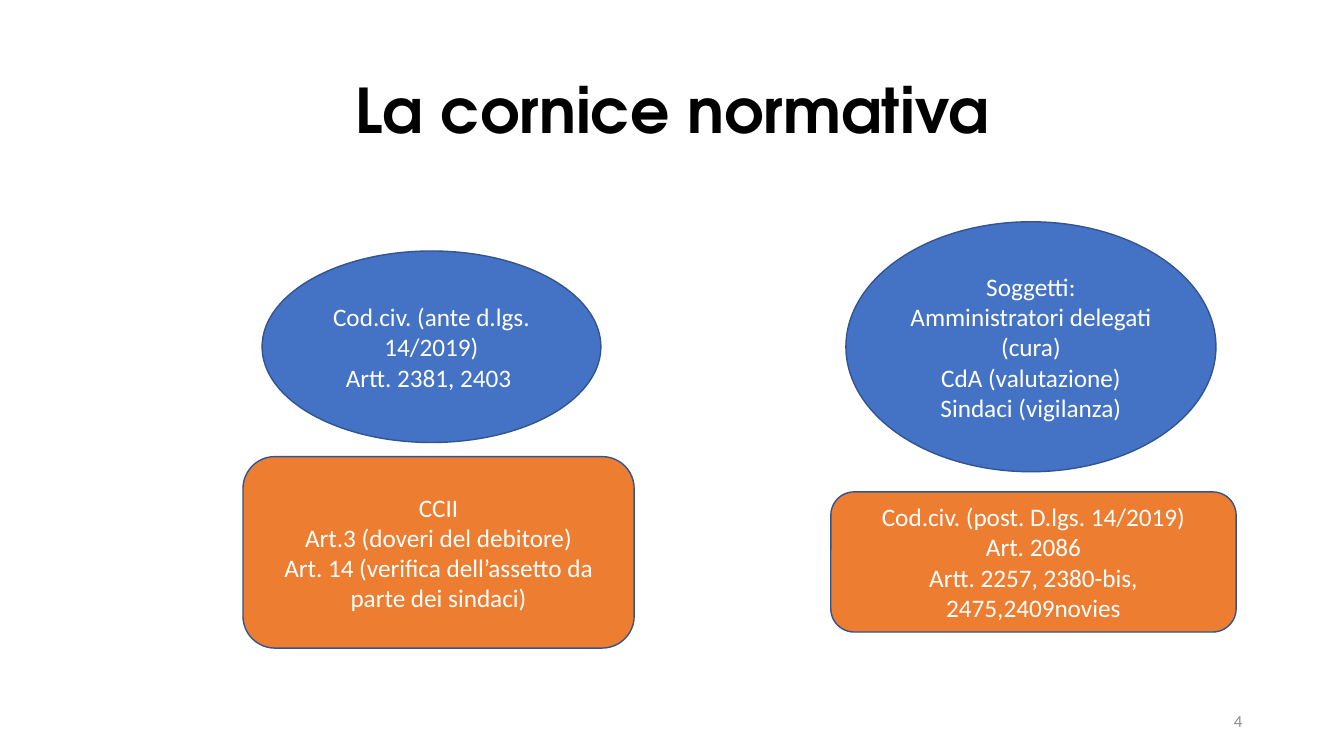
from pptx import Presentation
from pptx.dml.color import RGBColor
from pptx.enum import shapes, text
from pptx.util import Inches, Pt

COLORS = {"blue": "4472C4", "orange": "ED7D31", "edge": "325491",
          "white": "FFFFFF", "black": "000000", "gray": "8C8C8C"}
OVAL = shapes.MSO_SHAPE.OVAL
ROUND = shapes.MSO_SHAPE.ROUNDED_RECTANGLE
ALIGN = text.PP_ALIGN


def color(name):
    return RGBColor.from_string(COLORS[name])


def write(shape, lines, size, tint, align=ALIGN.CENTER, face="Calibri", bold=False):
    """Fill a shape with one middle-anchored paragraph per line."""
    frame = shape.text_frame
    frame.word_wrap = True
    frame.vertical_anchor = text.MSO_ANCHOR.MIDDLE
    for i, line in enumerate(lines):
        para = frame.add_paragraph() if i else frame.paragraphs[0]
        para.alignment = align
        run = para.add_run()
        run.text = line
        run.font.name = face
        run.font.size = Pt(size)
        run.font.bold = bold
        run.font.color.rgb = color(tint)


deck = Presentation()
deck.slide_width = Inches(13.33)
deck.slide_height = Inches(7.5)
slide = deck.slides.add_slide(deck.slide_layouts[6])

title = slide.shapes.add_textbox(Inches(0.92), Inches(0.4), Inches(11.5), Inches(1.45))
write(title, ["La cornice normativa"], 44, "black", face="TeX Gyre Adventor", bold=True)
title.text_frame.paragraphs[0].line_spacing = 0.9

blocks = [
    (OVAL, "blue", (2.6, 2.49, 3.36, 1.9),
     ["Cod.civ. (ante d.lgs. 14/2019)", "Artt. 2381, 2403 "]),
    (OVAL, "blue", (8.39, 2.2, 3.67, 2.48),
     ["Soggetti:", "Amministratori delegati (cura)",
      "CdA (valutazione)", "Sindaci (vigilanza)"]),
    (ROUND, "orange", (2.41, 4.53, 3.88, 1.9),
     ["CCII", "Art.3 (doveri del debitore)",
      "Art. 14 (verifica dell’assetto da parte dei sindaci)"]),
    (ROUND, "orange", (8.24, 4.88, 4.02, 1.39),
     ["Cod.civ. (post. D.lgs. 14/2019)", "Art. 2086",
      "Artt. 2257, 2380-bis, 2475,2409novies"]),
]
for kind, fill, box, lines in blocks:
    shape = slide.shapes.add_shape(kind, *map(Inches, box))
    shape.shadow.inherit = False
    shape.fill.solid()
    shape.fill.fore_color.rgb = color(fill)
    shape.line.color.rgb = color("edge")
    shape.line.width = Pt(1)
    write(shape, lines, 18, "white")

number = slide.shapes.add_textbox(Inches(9.42), Inches(6.95), Inches(3), Inches(0.4))
write(number, ["4"], 12, "gray", align=ALIGN.RIGHT)

deck.save("out.pptx")
